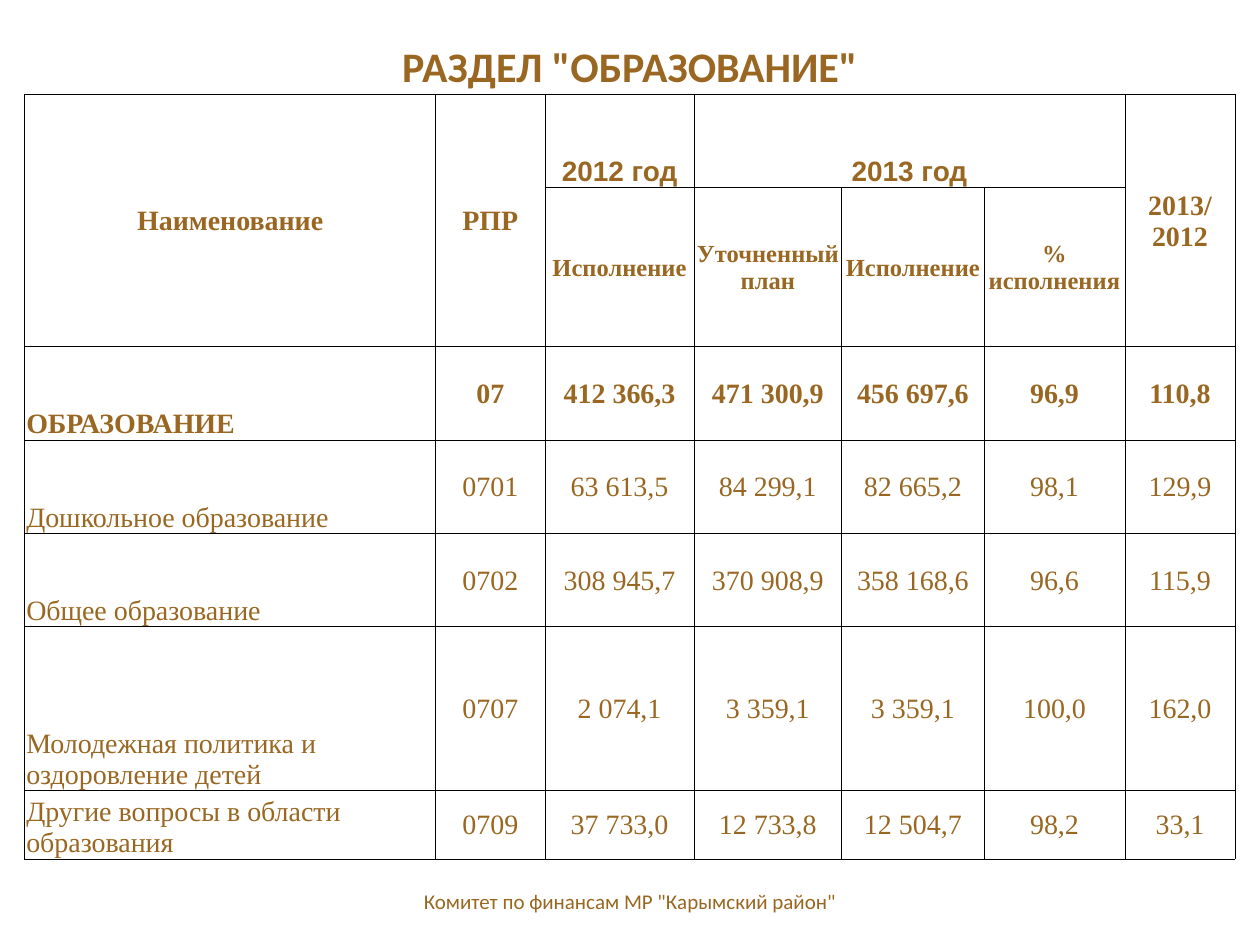
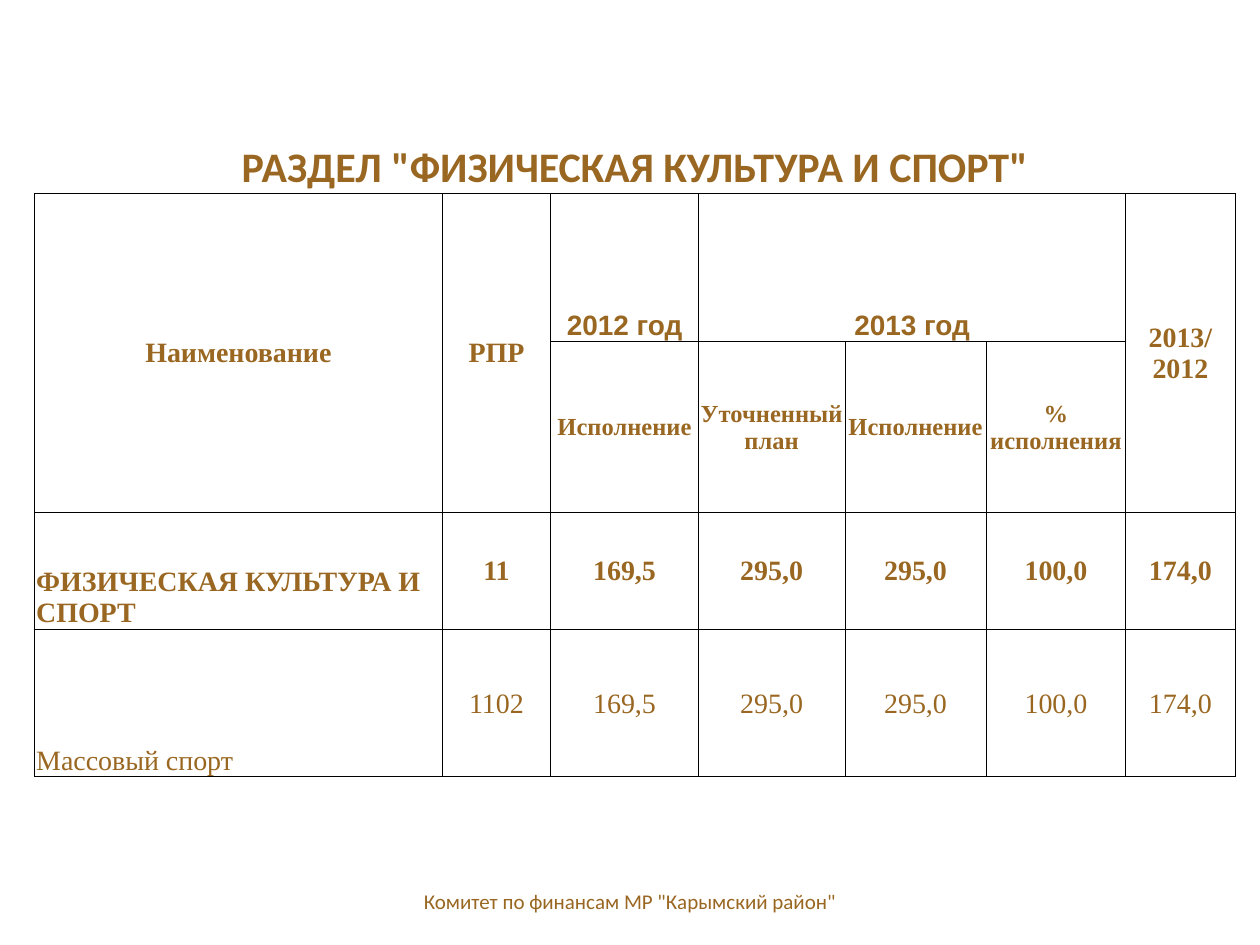
"""Builds two budget slides that share one table form and one footer."""
from lxml import etree
from pptx import Presentation
from pptx.dml.color import RGBColor
from pptx.enum.text import MSO_ANCHOR, PP_ALIGN
from pptx.oxml.ns import qn
from pptx.util import Cm, Pt

CENTER, LEFT = PP_ALIGN.CENTER, PP_ALIGN.LEFT
MIDDLE, BOTTOM = MSO_ANCHOR.MIDDLE, MSO_ANCHOR.BOTTOM

BROWN = RGBColor(0x99, 0x67, 0x21)
BLACK = RGBColor(0x00, 0x00, 0x00)
HEAD_FONT, YEAR_FONT, BODY_FONT = "Calibri", "Arial", "Times New Roman"

FOOTER = 'Комитет по финансам МР "Карымский район"'
YEARS = ("Наименование", "РПР", "2012 год", "2013 год", "", "", "2013/ 2012")
MEASURES = ("", "", "Исполнение", "Уточненный план", "Исполнение", "% исполнения", "")
MERGES = ((0, 0, 0, 6), (1, 0, 2, 0), (1, 1, 2, 1), (1, 3, 1, 5), (1, 6, 2, 6))
COLUMNS = (8.28, 2.21, 3, 2.98, 2.87, 2.84, 2.22)

EDUCATION = (
    ("ОБРАЗОВАНИЕ", "07", "412 366,3", "471 300,9", "456 697,6", "96,9", "110,8"),
    ("Дошкольное образование", "0701", "63 613,5", "84 299,1", "82 665,2", "98,1", "129,9"),
    ("Общее образование", "0702", "308 945,7", "370 908,9", "358 168,6", "96,6", "115,9"),
    ("Молодежная политика и оздоровление детей", "0707",
     "2 074,1", "3 359,1", "3 359,1", "100,0", "162,0"),
    ("Другие вопросы в области образования", "0709",
     "37 733,0", "12 733,8", "12 504,7", "98,2", "33,1"),
)
SPORT = (
    ("ФИЗИЧЕСКАЯ КУЛЬТУРА И СПОРТ", "11", "169,5", "295,0", "295,0", "100,0", "174,0"),
    ("Массовый спорт", "1102", "169,5", "295,0", "295,0", "100,0", "174,0"),
)


class Deck:
    def __init__(self):
        self.prs = Presentation()
        self.prs.slide_width, self.prs.slide_height = Cm(25.4), Cm(19.05)
        self.s = None

    def slide(self):
        self.s = self.prs.slides.add_slide(self.prs.slide_layouts[6])
        self.footer()

    def set_text(self, tf, text, font, size, bold=False, align=CENTER):
        tf.text = text
        p = tf.paragraphs[0]
        p.alignment = align
        for r in p.runs:
            r.font.name, r.font.size, r.font.bold = font, Pt(size), bold
            r.font.color.rgb = BROWN

    def footer(self):
        sp = self.s.shapes.add_textbox(Cm(8.1), Cm(17.65), Cm(9.2), Cm(1.02))
        tf = sp.text_frame
        tf.word_wrap = True
        tf.vertical_anchor = MIDDLE
        self.set_text(tf, FOOTER, HEAD_FONT, 12)

    def borders(self, cell, visible):
        tc_pr = cell._tc.get_or_add_tcPr()
        for side in "LRTB":
            ln = etree.SubElement(tc_pr, qn(f"a:ln{side}"), w=str(Pt(0.5)))
            if side in visible:
                fill = etree.SubElement(ln, qn("a:solidFill"))
                etree.SubElement(fill, qn("a:srgbClr"), val=str(BLACK))
            else:
                etree.SubElement(ln, qn("a:noFill"))

    def cell(self, cell, row, col, text):
        self.borders(cell, "LRTB" if row else "B")
        cell.fill.background()
        cell.margin_left = cell.margin_right = cell.margin_top = Cm(0.03)
        cell.margin_bottom = 0
        is_year = row == 1 and 2 <= col <= 5
        is_label = row > 2 and col == 0
        cell.vertical_anchor = BOTTOM if row == 0 or is_year or is_label else MIDDLE
        font = HEAD_FONT if row == 0 else YEAR_FONT if is_year else BODY_FONT
        size = {0: 24, 2: 14}.get(row, 16)
        if text:
            self.set_text(cell.text_frame, text, font, size, row <= 3,
                          LEFT if is_label else CENTER)

    def table(self, title, data, left, top, width, heights):
        rows = ((title,) + ("",) * (len(COLUMNS) - 1), YEARS, MEASURES) + data
        frame = self.s.shapes.add_table(len(rows), len(COLUMNS), Cm(left), Cm(top),
                                        Cm(width), Cm(sum(heights)))
        table = frame.table
        table.first_row = table.horz_banding = False
        for column, share in zip(table.columns, COLUMNS):
            column.width = Cm(width * share / sum(COLUMNS))
        for i, (texts, height) in enumerate(zip(rows, heights)):
            table.rows[i].height = Cm(height)
            for j, text in enumerate(texts):
                self.cell(table.cell(i, j), i, j, text)
        for r1, c1, r2, c2 in MERGES:
            table.cell(r1, c1).merge(table.cell(r2, c2))


def main():
    deck = Deck()
    deck.slide()
    deck.table('РАЗДЕЛ "ОБРАЗОВАНИЕ"', EDUCATION, 0.5, 0.02, 24.4,
               (1.88, 1.88, 3.21, 1.88, 1.88, 1.88, 3.3, 1.38))
    deck.slide()
    deck.table('РАЗДЕЛ "ФИЗИЧЕСКАЯ КУЛЬТУРА И СПОРТ"', SPORT, 0.7, 0.92, 24.2,
               (2.98, 2.98, 3.44, 2.36, 2.98))
    deck.prs.save("out.pptx")


if __name__ == "__main__":
    main()
